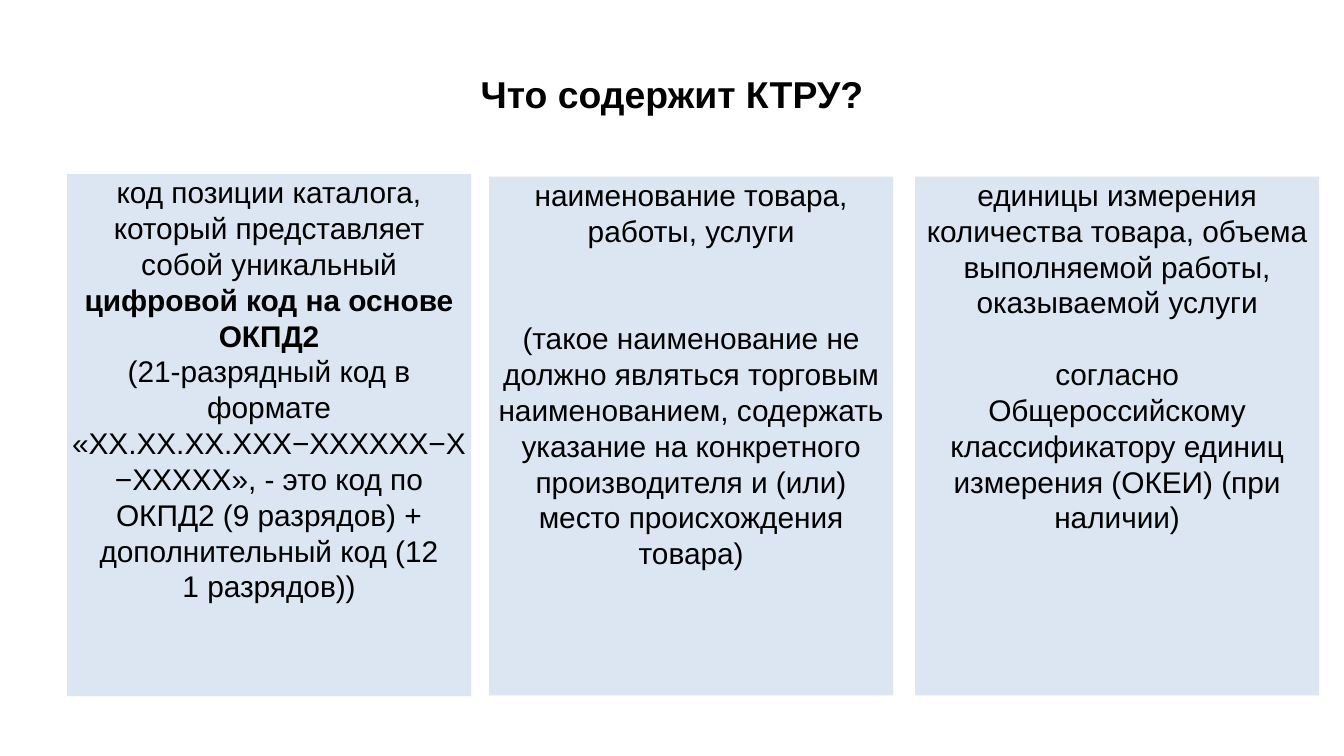
from dataclasses import dataclass

from pptx import Presentation
from pptx.dml.color import RGBColor
from pptx.enum.shapes import MSO_SHAPE
from pptx.enum.text import MSO_ANCHOR, MSO_AUTO_SIZE, PP_ALIGN
from pptx.util import Emu, Pt

RECTANGLE = MSO_SHAPE.RECTANGLE
TOP = MSO_ANCHOR.TOP
NO_AUTOFIT = MSO_AUTO_SIZE.NONE
CENTER = PP_ALIGN.CENTER
EMU_PER_PX = 4572
PANEL_WIDTH = 601


@dataclass(frozen=True)
class Theme:
    font: str = "Arial"
    ink: RGBColor = RGBColor(0, 0, 0)
    panel: RGBColor = RGBColor(0xDC, 0xE6, 0xF2)
    title_size: int = 20
    body_size: int = 16
    body_leading: float = 19.2


@dataclass(frozen=True)
class Passage:
    lines: tuple
    bold: bool = False
    gap_lines: int = 0


THEME = Theme()

CODE = (
    Passage(("код позиции каталога,", "который представляет", "собой уникальный")),
    Passage(("цифровой код на основе", "ОКПД2"), bold=True),
    Passage((
        "(21-разрядный код в",
        "формате",
        "«ХХ.ХХ.ХХ.ХХХ−ХХХХХХ−Х",
        "−ХХХХХ», - это код по",
        "ОКПД2 (9 разрядов) +",
        "дополнительный код (12",
        "1 разрядов))",
    )),
)
NAME = (
    Passage(("наименование товара,", "работы, услуги")),
    Passage((
        "(такое наименование не",
        "должно являться торговым",
        "наименованием, содержать",
        "указание на конкретного",
        "производителя и (или)",
        "место происхождения",
        "товара)",
    ), gap_lines=2),
)
UNITS = (
    Passage((
        "единицы измерения",
        "количества товара, объема",
        "выполняемой работы,",
        "оказываемой услуги",
    )),
    Passage((
        "согласно",
        "Общероссийскому",
        "классификатору единиц",
        "измерения (ОКЕИ) (при",
        "наличии)",
    ), gap_lines=1),
)


def px(length):
    return Emu(length * EMU_PER_PX)


def place(shape, left, top, width, height):
    shape.left, shape.top = px(left), px(top)
    shape.width, shape.height = px(width), px(height)


def prepare_frame(shape):
    frame = shape.text_frame
    frame.word_wrap = True
    frame.auto_size = NO_AUTOFIT
    frame.vertical_anchor = TOP
    frame.margin_left = frame.margin_right = px(0)
    frame.margin_top = frame.margin_bottom = px(0)
    return frame


def write_paragraph(para, text, size, bold):
    para.text = text
    para.alignment = CENTER
    para.space_before = para.space_after = Pt(0)
    para.font.name = THEME.font
    para.font.size = Pt(size)
    para.font.bold = bold
    para.font.color.rgb = THEME.ink


def remove_bullet(para):
    properties = para._p.get_or_add_pPr()
    properties.set("marL", "0")
    properties.set("indent", "0")
    properties.insert_element_before(
        properties.makeelement(
            "{http://schemas.openxmlformats.org/drawingml/2006/main}buNone"
        ),
        "a:tabLst", "a:defRPr", "a:extLst",
    )


def set_title(page, text):
    title = page.shapes.title
    place(title, 466, 106, 1068, 146)
    frame = prepare_frame(title)
    write_paragraph(frame.paragraphs[0], text, THEME.title_size, True)


def fill_panel(panel, passages):
    panel.fill.solid()
    panel.fill.fore_color.rgb = THEME.panel
    panel.line.fill.background()
    frame = prepare_frame(panel)
    para = frame.paragraphs[0]
    for passage in passages:
        for number, line in enumerate(passage.lines):
            if para is None:
                para = frame.add_paragraph()
            write_paragraph(para, line, THEME.body_size, passage.bold)
            para.line_spacing = Pt(THEME.body_leading)
            if number == 0:
                para.space_before = Pt(passage.gap_lines * THEME.body_leading)
            remove_bullet(para)
            para = None


def add_panel(page, left, passages):
    panel = page.shapes.add_shape(
        RECTANGLE, px(left), px(263), px(PANEL_WIDTH), px(772)
    )
    panel.shadow.inherit = False
    fill_panel(panel, passages)


def main():
    deck = Presentation()
    deck.slide_width, deck.slide_height = px(2000), px(1125)
    page = deck.slides.add_slide(deck.slide_layouts[1])
    set_title(page, "Что содержит КТРУ?")
    body = page.placeholders[1]
    place(body, 100, 259, PANEL_WIDTH, 777)
    fill_panel(body, CODE)
    add_panel(page, 728, NAME)
    add_panel(page, 1362, UNITS)
    deck.save("out.pptx")


if __name__ == "__main__":
    main()
